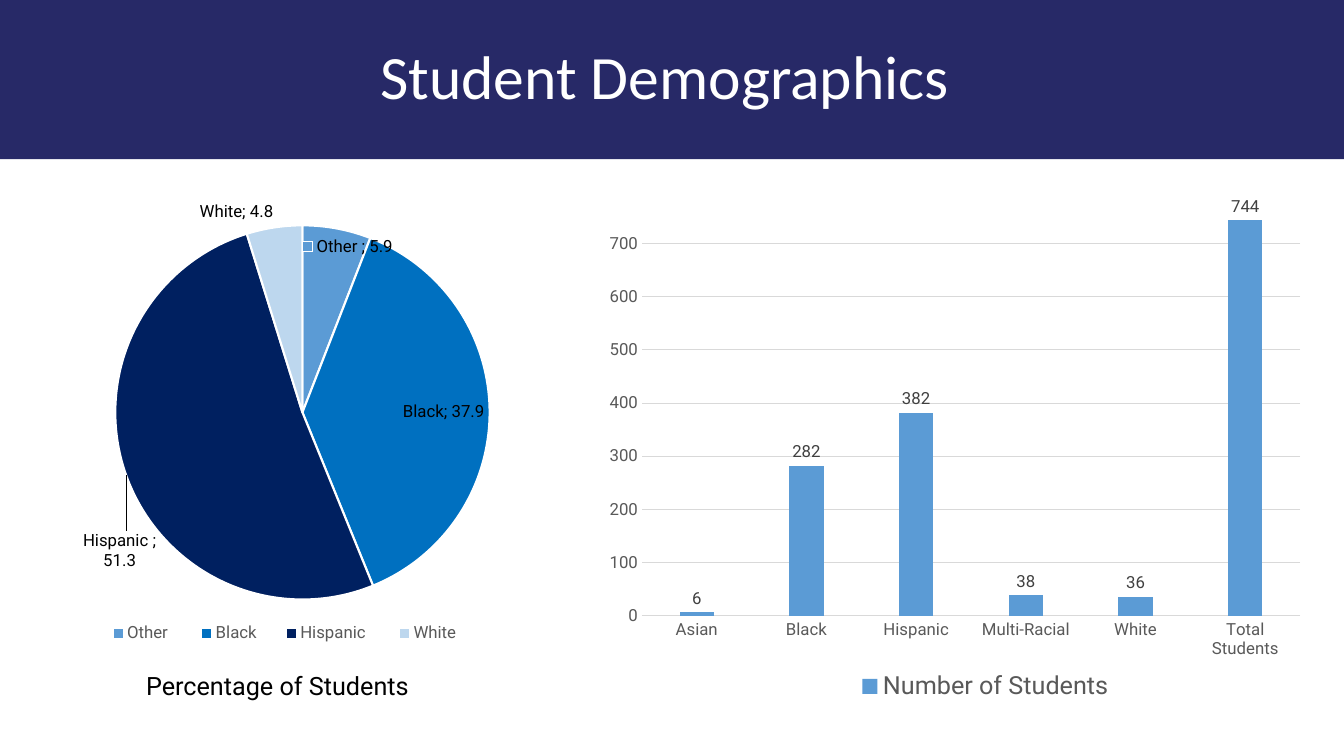
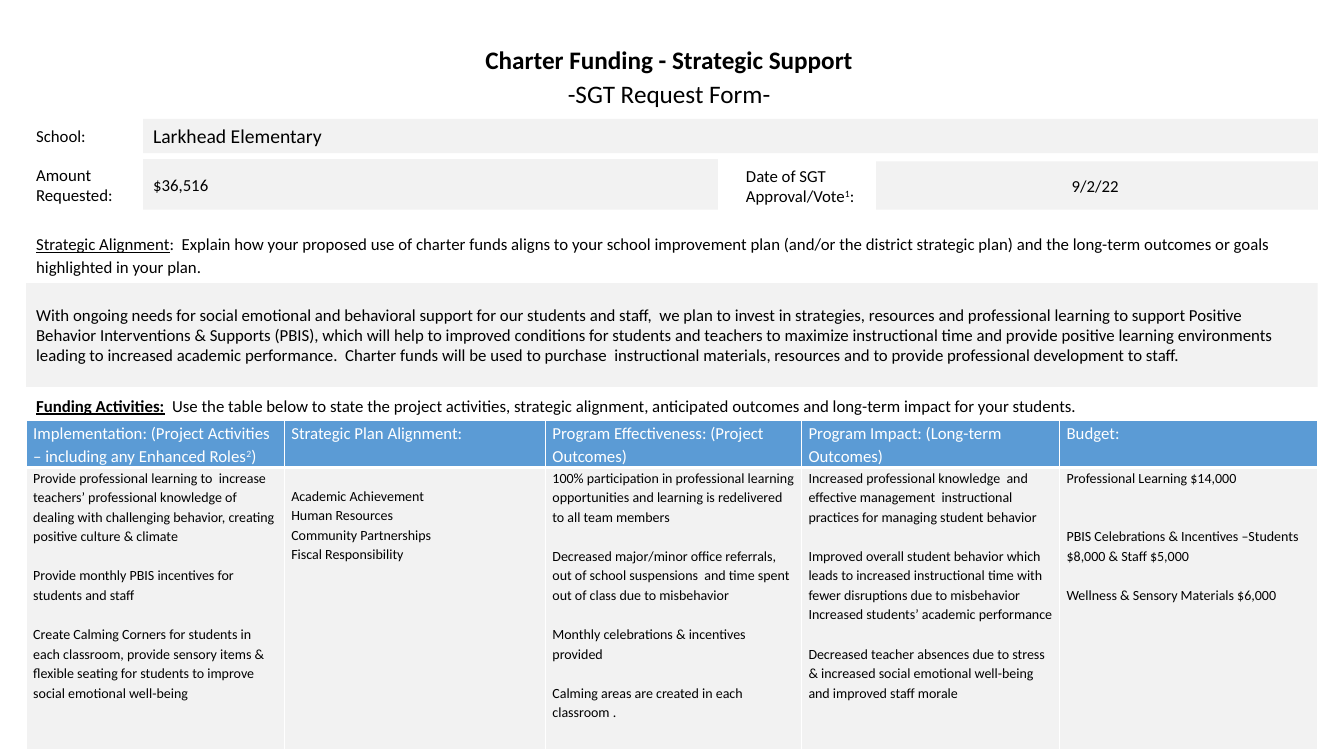
from dataclasses import dataclass

from lxml import etree
from pptx import Presentation
from pptx.chart.data import CategoryChartData
from pptx.dml.color import RGBColor
from pptx.enum.chart import XL_CHART_TYPE as ChartType
from pptx.enum.chart import XL_LABEL_POSITION as LabelPos
from pptx.enum.chart import XL_LEGEND_POSITION as LegendPos
from pptx.enum.chart import XL_TICK_MARK as TickMark
from pptx.enum.shapes import MSO_SHAPE as Shape
from pptx.enum.text import MSO_ANCHOR as Anchor
from pptx.enum.text import MSO_AUTO_SIZE as AutoSize
from pptx.enum.text import PP_ALIGN as Align
from pptx.oxml import parse_xml
from pptx.oxml.ns import nsdecls, qn
from pptx.util import Inches, Pt


@dataclass(frozen=True)
class Theme:
    # Colours
    navy: str = "272967"
    blue: str = "5B9BD5"
    white: str = "FFFFFF"
    black: str = "000000"
    field: str = "F2F2F2"
    grid: str = "D9D9D9"
    grey: str = "595959"
    dark: str = "404040"
    slices: tuple = ("5B9BD5", "0070C0", "002060", "BDD7EE")
    # Fonts and sizes
    font: str = "Calibri"
    chart_font: str = "Roboto"
    title: int = 44
    heading: int = 18
    entry: int = 14
    body: int = 12
    small: int = 10
    # Spacing
    loose: float = 1.15
    gap: int = 14


T = Theme()

# Form rows: left, top, width, height, runs, options
FORM = [
    (0.26, 1.18, 1.07, 0.34, [("School:", "")], {}),
    (1.42, 1.18, 11.65, 0.34, [("Larkhead Elementary", "")],
     {"fill": T.field, "size": T.entry}),
    (0.26, 1.58, 1.07, 0.5, [("Amount Requested:", "")], {}),
    (1.42, 1.58, 5.7, 0.5, [("$36,516", "")], {"fill": T.field}),
    (7.3, 1.59, 1.32, 0.5,
     [("Date of SGT Approval/Vote", ""), ("1", "^"), (":", "")], {}),
    (8.69, 1.6, 4.38, 0.48, [("9/2/22 ", "")],
     {"fill": T.field, "align": Align.CENTER}),
    (0.26, 2.27, 12.81, 0.5,
     [("Strategic Alignment", "u"),
      (":  Explain how your proposed use of charter funds aligns to your school "
       "improvement plan (and/or the district strategic plan) and the long-term "
       "outcomes or goals highlighted in your plan.", "")], {"spacing": T.loose}),
    (0.26, 2.81, 12.81, 1.03,
     [("With ongoing needs for social emotional and behavioral support for our "
       "students and staff,  we plan to invest in strategies, resources and "
       "professional learning to support Positive Behavior Interventions & "
       "Supports (PBIS), which will help to improved conditions for students and "
       "teachers to maximize instructional time and provide positive learning "
       "environments  leading to increased academic performance.  Charter funds "
       "will be used to purchase  instructional materials, resources and to "
       "provide professional development to staff.", "")], {"fill": T.field}),
    (0.26, 3.84, 12.81, 0.34,
     [("Funding Activities:", "bu"),
      ("  Use the table below to state the project activities, strategic "
       "alignment, anticipated outcomes and long-term impact for your students.",
       "")], {"spacing": T.loose}),
]

# Table columns: width, heading runs, top inset, (lines of gap, text) entries
ACTIVITIES = [
    (2.56, [("Implementation: (Project Activities – including any Enhanced Roles", ""),
            ("2", "^"), (")", "")], 0,
     [(0, "Provide professional learning to  increase teachers’ professional "
          "knowledge of dealing with challenging behavior, creating positive "
          "culture & climate"),
      (1, "Provide monthly PBIS incentives for students and staff"),
      (1, "Create Calming Corners for students in each classroom, provide sensory "
          "items & flexible seating for students to improve social emotional "
          "well-being")]),
    (2.59, [("Strategic Plan Alignment:", "")], 0.18,
     [(0, "Academic Achievement"), (0, "Human Resources"),
      (0, "Community Partnerships"), (0, "Fiscal Responsibility")]),
    (2.54, [("Program Effectiveness: (Project Outcomes)", "")], 0,
     [(0, "100% participation in professional learning opportunities and learning "
          "is redelivered to all team members"),
      (1, "Decreased major/minor office referrals, out of school suspensions  and "
          "time spent out of class due to misbehavior"),
      (1, "Monthly celebrations & incentives provided"),
      (1, "Calming areas are created in each classroom .")]),
    (2.56, [("Program Impact: (Long-term Outcomes)", "")], 0,
     [(0, "Increased professional knowledge  and effective management  "
          "instructional practices for managing student behavior"),
      (1, "Improved overall student behavior which leads to increased "
          "instructional time with fewer disruptions due to misbehavior"),
      (0, "Increased students’ academic performance"),
      (1, "Decreased teacher absences due to stress  & increased social emotional "
          "well-being  and improved staff morale")]),
    (2.56, [("Budget:", "")], 0,
     [(0, "Professional Learning $14,000"),
      (2, "PBIS Celebrations & Incentives –Students $8,000 & Staff $5,000"),
      (1, "Wellness & Sensory Materials $6,000")]),
]


def box(*lengths):
    return [Inches(n) for n in lengths]


def rgb(value):
    return RGBColor.from_string(value)


def style_font(font, size, color, name=T.font):
    font.size, font.name = Pt(size), name
    font.color.rgb = rgb(color)


def add_runs(p, runs, size=T.body, color=T.black, font=T.font,
             align=Align.LEFT, spacing=1.0):
    """Flags of a run: b bold, u underlined, ^ superscript."""
    p.alignment, p.line_spacing = align, spacing
    for text, flags in runs:
        r = p.add_run()
        r.text = text
        style_font(r.font, size, color, font)
        r.font.bold = "b" in flags
        r.font.underline = "u" in flags
        if "^" in flags:
            r._r.get_or_add_rPr().set("baseline", "30000")


def add_title_slide(prs, place, lines, size, color, spacing, anchor, fill=None):
    s = prs.slides.add_slide(prs.slide_layouts.get_by_name("Title Only"))
    sp = s.shapes.title
    sp.left, sp.top, sp.width, sp.height = box(*place)
    if fill:
        sp.fill.solid()
        sp.fill.fore_color.rgb = rgb(fill)
    tf = sp.text_frame
    tf.auto_size, tf.word_wrap, tf.vertical_anchor = AutoSize.NONE, True, anchor
    for i, run in enumerate(lines):
        p = tf.add_paragraph() if i else tf.paragraphs[0]
        p.space_before = Pt(0)
        add_runs(p, [run], size, color, align=Align.CENTER, spacing=spacing)
    return s


def add_field(s, place, runs, fill=T.white, **text):
    sp = s.shapes.add_shape(Shape.RECTANGLE, *box(*place))
    sp.shadow.inherit = False
    sp.fill.solid()
    sp.fill.fore_color.rgb = rgb(fill)
    sp.line.fill.background()
    tf = sp.text_frame
    tf.word_wrap, tf.vertical_anchor = True, Anchor.MIDDLE
    add_runs(tf.paragraphs[0], runs, **text)


# Charts
def layout_xml(inner=False, **values):
    target = '<c:layoutTarget val="inner"/>' if inner else ""
    modes = "".join(f'<c:{k}Mode val="edge"/>' for k in "xy") if "w" in values else ""
    sizes = "".join(f'<c:{k} val="{v}"/>' for k, v in values.items())
    return parse_xml(f'<c:layout {nsdecls("c")}><c:manualLayout>{target}{modes}'
                     f'{sizes}</c:manualLayout></c:layout>')


def add_chart(s, kind, place, name, values, plot, legend, legend_size):
    data = CategoryChartData()
    data.categories = list(values)
    data.add_series(name, list(values.values()))
    chart = s.shapes.add_chart(kind, *box(*place), data).chart
    chart.has_title = False
    style_font(chart.font, T.small, T.black)
    area = chart._chartSpace.chart.plotArea
    for old in area.findall(qn("c:layout")):
        area.remove(old)
    area.insert(0, layout_xml(True, **dict(zip("xywh", plot))))
    chart.has_legend = True
    lg = chart.legend
    lg.position, lg.include_in_layout = LegendPos.BOTTOM, False
    style_font(lg.font, legend_size, T.grey, T.chart_font)
    lg._element.find(qn("c:legendPos")).addnext(
        layout_xml(**dict(zip("xywh", legend))))
    return chart


def move_label(point, dx, dy, key):
    label = point.data_label
    style_font(label.font, T.body, T.black, T.chart_font)
    label.position = LabelPos.OUTSIDE_END
    d = label._dLbl
    d.find(qn("c:idx")).addnext(layout_xml(x=dx, y=dy))
    d.find(qn("c:showCatName")).set("val", "1")
    d.find(qn("c:showLegendKey")).set("val", str(int(key)))
    etree.SubElement(d, qn("c:separator")).text = "; "


def add_share_pie(s):
    chart = add_chart(
        s, ChartType.PIE, (0.18, 1.76, 11.75, 4.76), "Series 1",
        {"Other ": 5.9, "Black": 37.9, "Hispanic ": 51.3, "White": 4.8},
        (0.08, 0.1, 0.32, 0.78), (0.06, 0.92, 0.33, 0.06), T.body)
    plot = chart.plots[0]
    plot.vary_by_categories = True
    series = plot.series[0]
    for i, color in enumerate(T.slices):
        fmt = series.points[i].format
        fmt.fill.solid()
        fmt.fill.fore_color.rgb = rgb(color)
        fmt.line.color.rgb = rgb(T.white)
        fmt.line.width = Pt(1.5)
    labels = series.data_labels
    labels.show_value = labels.show_category_name = True
    labels.position = LabelPos.BEST_FIT
    style_font(labels.font, T.body, T.black, T.chart_font)
    separator = etree.Element(qn("c:separator"))
    separator.text = "; "
    labels._element.find(qn("c:showBubbleSize")).addnext(separator)
    move_label(series.points[0], -0.03, 0.07, key=True)
    move_label(series.points[2], 0.03, 0.11, key=False)


def add_count_columns(s):
    chart = add_chart(
        s, ChartType.COLUMN_CLUSTERED, (5.95, 1.95, 6.95, 5.06),
        "Number of Students ",
        {"Asian": 6, "Black": 282, "Hispanic": 382, "Multi-Racial": 38,
         "White": 36, "Total Students": 744},
        (0.06, 0.03, 0.94, 0.79), (0.37, 0.92, 0.37, 0.08), T.heading)
    plot = chart.plots[0]
    plot.vary_by_categories = False
    plot.gap_width, plot.overlap = 219, -27
    fill = plot.series[0].format.fill
    fill.solid()
    fill.fore_color.rgb = rgb(T.blue)
    labels = plot.series[0].data_labels
    labels.show_value, labels.position = True, LabelPos.OUTSIDE_END
    style_font(labels.font, T.body, T.dark, T.chart_font)
    cat, val = chart.category_axis, chart.value_axis
    for axis in (cat, val):
        axis.major_tick_mark = axis.minor_tick_mark = TickMark.NONE
        style_font(axis.tick_labels.font, T.body, T.grey, T.chart_font)
    val.minimum_scale, val.maximum_scale, val.major_unit = 0, 750, 100
    val.format.line.fill.background()
    val.has_major_gridlines = True
    for line in (cat.format.line, val.major_gridlines.format.line):
        line.color.rgb = rgb(T.grid)
        line.width = Pt(0.75)


# Table
def style_cell(cell, fill, top_inset, widths):
    cell.margin_left = cell.margin_right = Inches(0.07)
    cell.margin_top, cell.margin_bottom = Inches(top_inset), 0
    cell.fill.solid()
    cell.fill.fore_color.rgb = rgb(fill)
    tc_pr = cell._tc.get_or_add_tcPr()
    for i, (side, width) in enumerate(zip("LRTB", widths)):
        tc_pr.insert(i, parse_xml(
            f'<a:ln{side} {nsdecls("a")} w="{Pt(width)}"><a:solidFill>'
            f'<a:srgbClr val="{T.white}"/></a:solidFill></a:ln{side}>'))


def add_activity_table(s):
    table = s.shapes.add_table(2, len(ACTIVITIES),
                               *box(0.26, 4.17, 12.81, 3.23)).table
    table.horz_banding = False
    table.rows[0].height, table.rows[1].height = box(0.43, 2.8)
    for i, (width, heading, inset, entries) in enumerate(ACTIVITIES):
        table.columns[i].width = Inches(width)
        head, body = table.cell(0, i), table.cell(1, i)
        style_cell(head, T.blue, 0, (1, 1, 1, 3))
        add_runs(head.text_frame.paragraphs[0], heading, color=T.white,
                 spacing=T.loose)
        style_cell(body, T.field, inset, (1, 1, 3, 1))
        tf = body.text_frame
        for j, (gaps, text) in enumerate(entries):
            p = tf.add_paragraph() if j else tf.paragraphs[0]
            p.space_before = Pt(gaps * T.gap)
            add_runs(p, [(text, "")], T.small, spacing=T.loose)


# Slides
def add_demographics(prs):
    s = add_title_slide(prs, (0, 0, 13.33, 1.58), [("Student Demographics ", "")],
                        T.title, T.white, 0.9, Anchor.MIDDLE, T.navy)
    add_share_pie(s)
    add_count_columns(s)
    tf = s.shapes.add_textbox(*box(1.35, 6.6, 2.99, 0.4)).text_frame
    tf.word_wrap = True
    add_runs(tf.paragraphs[0], [("Percentage of Students", "")], T.heading,
             font=T.chart_font)


def add_request_form(prs):
    s = add_title_slide(prs, (3.33, 0.34, 6.67, 0.78),
                        [("Charter Funding - Strategic Support ", "b"),
                         ("-SGT Request Form- ", "")],
                        T.heading, T.black, T.loose, Anchor.TOP)
    for *place, runs, options in FORM:
        add_field(s, place, runs, **options)
    add_activity_table(s)


def main():
    prs = Presentation()
    prs.slide_width, prs.slide_height = box(13.33, 7.5)
    add_demographics(prs)
    add_request_form(prs)
    prs.save("out.pptx")


if __name__ == "__main__":
    main()
